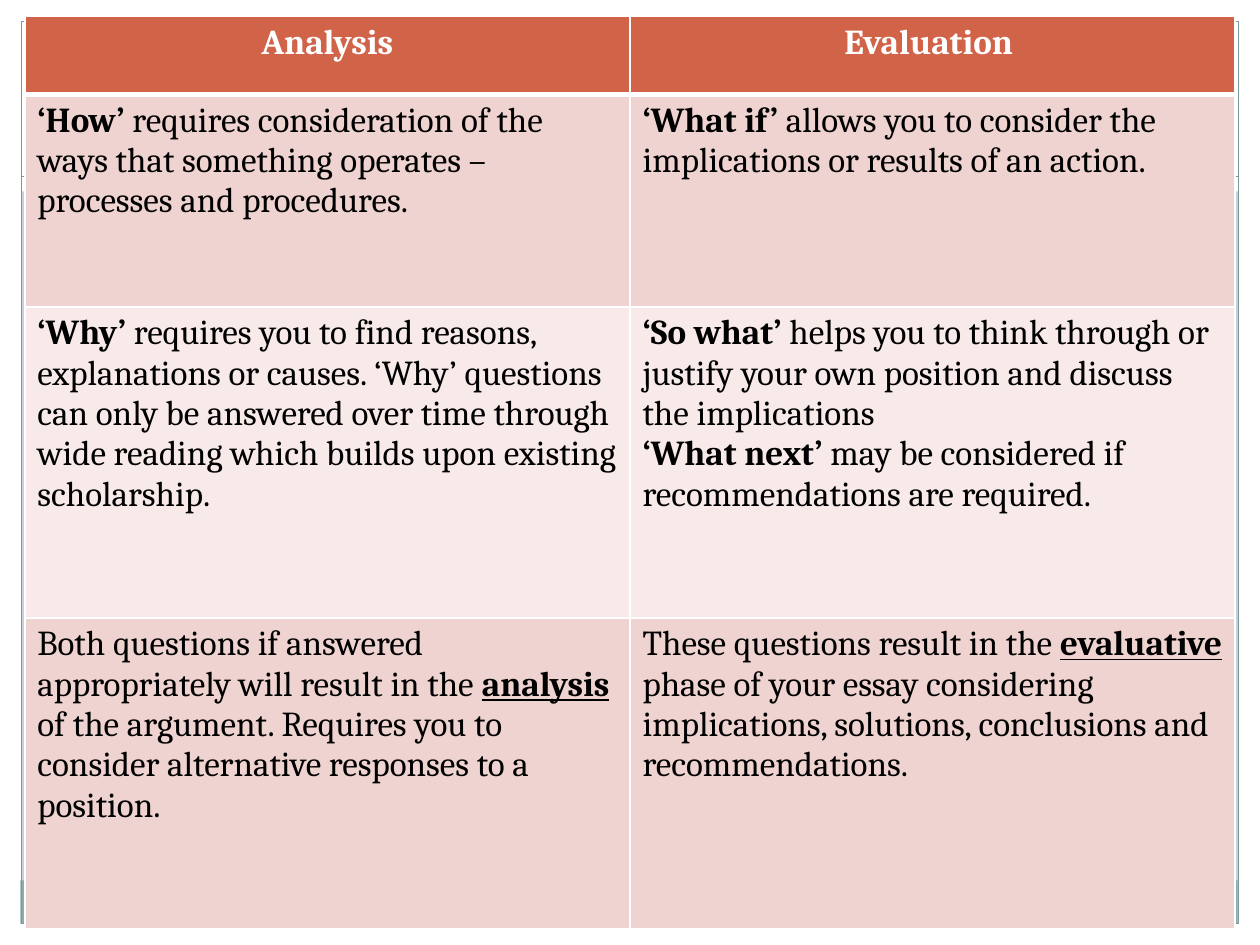
"""Build a slide comparing analysis and evaluation questions in a framed table."""
from lxml import etree
from pptx import Presentation
from pptx.dml.color import RGBColor
from pptx.enum.dml import MSO_LINE
from pptx.enum.shapes import MSO_CONNECTOR, MSO_SHAPE
from pptx.enum.text import PP_ALIGN
from pptx.oxml.ns import qn
from pptx.util import Cm, Pt

RECTANGLE = MSO_SHAPE.RECTANGLE
STRAIGHT = MSO_CONNECTOR.STRAIGHT
SHORT_DASH = MSO_LINE.SQUARE_DOT
CENTER = PP_ALIGN.CENTER
LEFT = PP_ALIGN.LEFT

WHITE = RGBColor(0xFF, 0xFF, 0xFF)
BLACK = RGBColor(0x00, 0x00, 0x00)
BACKGROUND = RGBColor(0xC5, 0xD1, 0xD7)
FOOTER = RGBColor(0x8C, 0xAD, 0xAE)
FRAME = RGBColor(0x7C, 0x99, 0x9A)
HEADER = RGBColor(0xD1, 0x63, 0x49)
BAND_DARK = RGBColor(0xEE, 0xD3, 0xD0)
BAND_LIGHT = RGBColor(0xF7, 0xEA, 0xE9)

PLAIN = {"bold": False}
BOLD = {"bold": True}
KEYWORD = {"bold": True, "underline": True}

ROWS = [
    (1.57, HEADER, [
        [[("Analysis", BOLD)]],
        [[("Evaluation ", BOLD)]],
    ]),
    (4.29, BAND_DARK, [
        [[("‘How’ ", BOLD),
          ("requires consideration of the ways that something operates – "
           "processes and procedures.", PLAIN)]],
        [[("‘What if’ ", BOLD),
          ("allows you to consider the implications or results of an action.", PLAIN)]],
    ]),
    (6.27, BAND_LIGHT, [
        [[("‘Why’ ", BOLD),
          ("requires you to find reasons, explanations or causes. ‘Why’ questions "
           "can only be answered over time through wide reading which builds upon "
           "existing scholarship.", PLAIN)]],
        [[("‘So what’ ", BOLD),
          ("helps you to think through or justify your own position and discuss "
           "the implications", PLAIN)],
         [("‘What next’ ", BOLD),
          ("may be considered if recommendations are required.", PLAIN)]],
    ]),
    (6.27, BAND_DARK, [
        [[("Both questions if answered appropriately will result in the ", PLAIN),
          ("analysis", KEYWORD),
          (" of the argument. Requires you to consider alternative responses "
           "to a position.", PLAIN)]],
        [[("These questions result in the ", PLAIN),
          ("evaluative", KEYWORD),
          (" phase of your essay considering implications, solutions, conclusions "
           "and recommendations.", PLAIN)]],
    ]),
]


def add_rectangle(slide, box, fill=None, line=None):
    shape = slide.shapes.add_shape(RECTANGLE, *(Cm(value) for value in box))
    shape.shadow.inherit = False
    if fill is None:
        shape.fill.background()
    else:
        shape.fill.solid()
        shape.fill.fore_color.rgb = fill
    if line is None:
        shape.line.fill.background()
    else:
        shape.line.color.rgb = line
        shape.line.width = Pt(0.75)


def set_borders(cell, widths):
    properties = cell._tc.get_or_add_tcPr()
    for position, (side, width) in enumerate(widths.items()):
        border = etree.Element(qn(f"a:ln{side}"), w=str(Pt(width)))
        fill = etree.SubElement(border, qn("a:solidFill"))
        etree.SubElement(fill, qn("a:srgbClr"), val=str(WHITE))
        properties.insert(position, border)


presentation = Presentation()
presentation.slide_width = Cm(25.4)
presentation.slide_height = Cm(19.05)
slide = presentation.slides.add_slide(presentation.slide_layouts[6])
slide.background.fill.solid()
slide.background.fill.fore_color.rgb = BACKGROUND

for box in [
    (0, 18.62, 25.4, 0.43),
    (0, 0, 25.4, 3.86),
    (0, 0, 0.43, 19.05),
    (24.97, 0, 0.43, 19.05),
]:
    add_rectangle(slide, box, fill=WHITE)
add_rectangle(slide, (0.41, 17.75, 24.54, 0.87), fill=FOOTER)
add_rectangle(slide, (0.43, 0.43, 24.54, 18.19), line=FRAME)

divider = slide.shapes.add_connector(STRAIGHT, Cm(0.43), Cm(3.56), Cm(24.97), Cm(3.56))
divider.line.color.rgb = FRAME
divider.line.width = Pt(0.75)
divider.line.dash_style = SHORT_DASH
etree.SubElement(divider._element.spPr, qn("a:effectLst"))

total_height = sum(height for height, _, _ in ROWS)
table = slide.shapes.add_table(
    len(ROWS), 2, Cm(0.5), Cm(0.33), Cm(24.4), Cm(total_height)
).table

for row_index, (height, fill, texts) in enumerate(ROWS):
    table.rows[row_index].height = Cm(height)
    is_header = row_index == 0
    borders = {"L": 1, "R": 1, "T": 3 if row_index == 1 else 1, "B": 3 if is_header else 1}
    for column_index, paragraphs in enumerate(texts):
        cell = table.cell(row_index, column_index)
        cell.fill.solid()
        cell.fill.fore_color.rgb = fill
        set_borders(cell, borders)
        frame = cell.text_frame
        for paragraph_index, runs in enumerate(paragraphs):
            paragraph = frame.add_paragraph() if paragraph_index else frame.paragraphs[0]
            paragraph.alignment = CENTER if is_header else LEFT
            for text, style in runs:
                run = paragraph.add_run()
                run.text = text
                run.font.color.rgb = WHITE if is_header else BLACK
                for name, value in {"name": "Cambria", "size": Pt(20), **style}.items():
                    setattr(run.font, name, value)

presentation.save("out.pptx")
